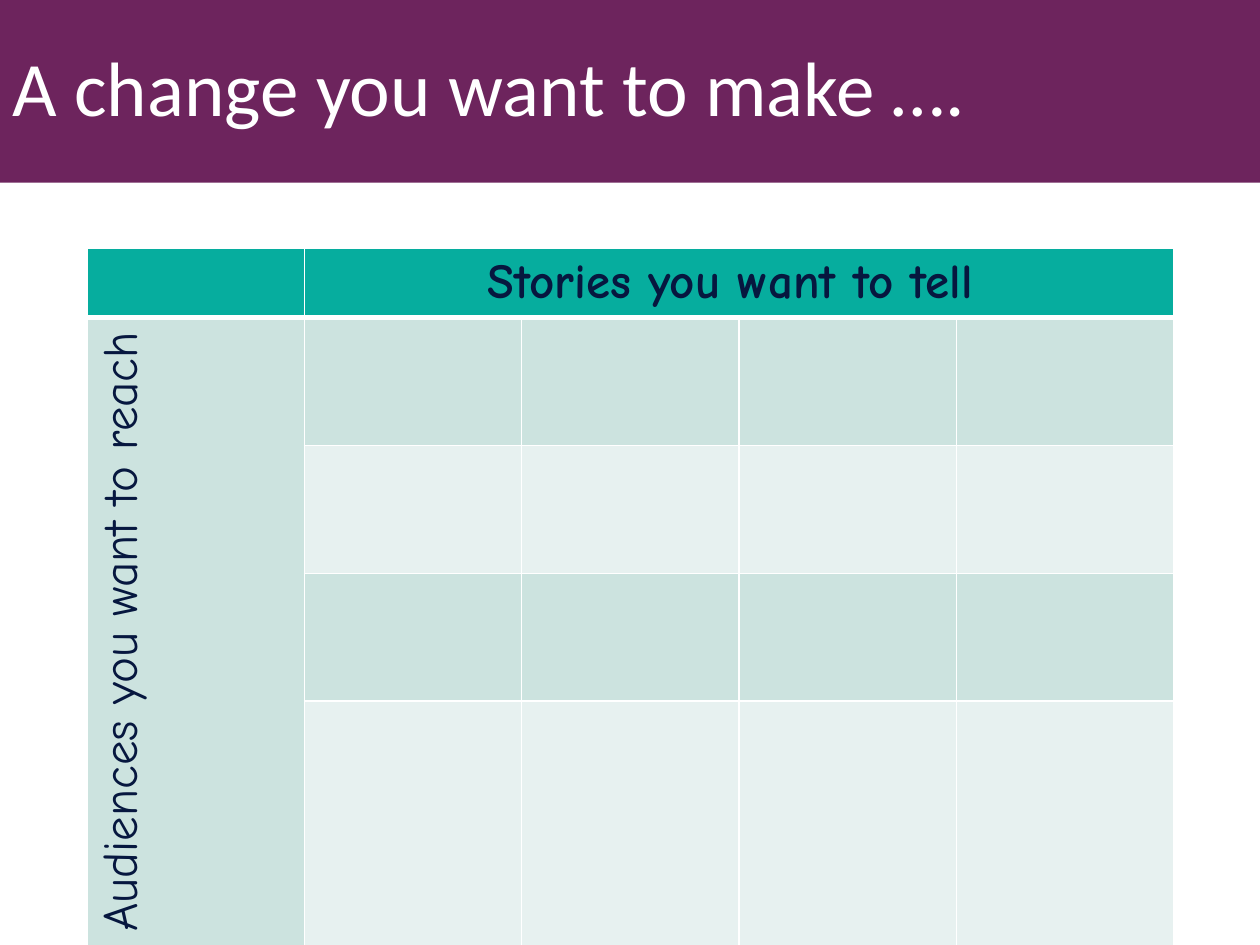
from lxml import etree
from pptx import Presentation
from pptx.dml.color import RGBColor
from pptx.enum.text import MSO_ANCHOR, MSO_AUTO_SIZE, PP_ALIGN
from pptx.oxml.ns import qn
from pptx.util import Pt

LEFT, CENTER = PP_ALIGN.LEFT, PP_ALIGN.CENTER
MIDDLE = MSO_ANCHOR.MIDDLE
NO_AUTOFIT = MSO_AUTO_SIZE.NONE

PLUM = RGBColor(0x6D, 0x24, 0x5D)
TEAL = RGBColor(0x06, 0xAD, 0x9E)
MINT = RGBColor(0xCC, 0xE3, 0xDF)
PALE_MINT = RGBColor(0xE7, 0xF1, 0xF0)
NAVY = RGBColor(0x06, 0x17, 0x3F)
WHITE = RGBColor(0xFF, 0xFF, 0xFF)

COL_WIDTH = 124.2
ROW_HEIGHTS = [39.6, 73, 73, 73, 139.5]
N_COLS = 5


def style_text(p, font, size, color, align, bold=False):
    p.alignment = align
    p.font.name = font
    p.font.size = Pt(size)
    p.font.color.rgb = color
    p.font.bold = bold


def add_title(s, text):
    title = s.shapes.title
    title.left, title.top, title.width, title.height = Pt(0), Pt(0), Pt(720), Pt(104.4)
    title.fill.solid()
    title.fill.fore_color.rgb = PLUM
    tf = title.text_frame
    tf.auto_size = NO_AUTOFIT
    tf.vertical_anchor = MIDDLE
    tf.text = text
    p = tf.paragraphs[0]
    p.line_spacing = 0.9
    style_text(p, "Calibri", 44, WHITE, LEFT)


def set_borders(cell, bottom):
    """Draw white cell borders, 1 pt wide except for the bottom one."""
    tc_pr = cell._tc.get_or_add_tcPr()
    for side, width in (("L", 1), ("R", 1), ("T", 1), ("B", bottom)):
        ln = etree.SubElement(tc_pr, qn(f"a:ln{side}"), w=str(Pt(width)))
        fill = etree.SubElement(ln, qn("a:solidFill"))
        etree.SubElement(fill, qn("a:srgbClr"), val=str(WHITE))


def label_cell(cell, text, bold):
    cell.text = text
    style_text(cell.text_frame.paragraphs[0], "Comic Neue", 28, NAVY, CENTER, bold)


def add_planning_grid(s):
    frame = s.shapes.add_table(len(ROW_HEIGHTS), N_COLS, Pt(49.7), Pt(142),
                               Pt(COL_WIDTH * N_COLS), Pt(sum(ROW_HEIGHTS)))
    table = frame.table
    for col in table.columns:
        col.width = Pt(COL_WIDTH)
    for i, height in enumerate(ROW_HEIGHTS):
        table.rows[i].height = Pt(height)
        band = TEAL if i == 0 else MINT if i % 2 else PALE_MINT
        for j in range(N_COLS):
            cell = table.cell(i, j)
            set_borders(cell, bottom=1 if i else 3)
            cell.fill.solid()
            cell.fill.fore_color.rgb = MINT if i and j == 0 else band

    stories, audiences = table.cell(0, 1), table.cell(1, 0)
    stories.merge(table.cell(0, N_COLS - 1))
    audiences.merge(table.cell(len(ROW_HEIGHTS) - 1, 0))
    label_cell(stories, "Stories you want to tell ", bold=True)
    label_cell(audiences, "Audiences you want to reach ", bold=False)
    audiences._tc.get_or_add_tcPr().set("vert", "vert270")


def main():
    prs = Presentation()
    prs.slide_width, prs.slide_height = Pt(720), Pt(540)
    s = prs.slides.add_slide(prs.slide_layouts[5])
    add_title(s, "A change you want to make ….")
    add_planning_grid(s)
    prs.save("out.pptx")


if __name__ == "__main__":
    main()
